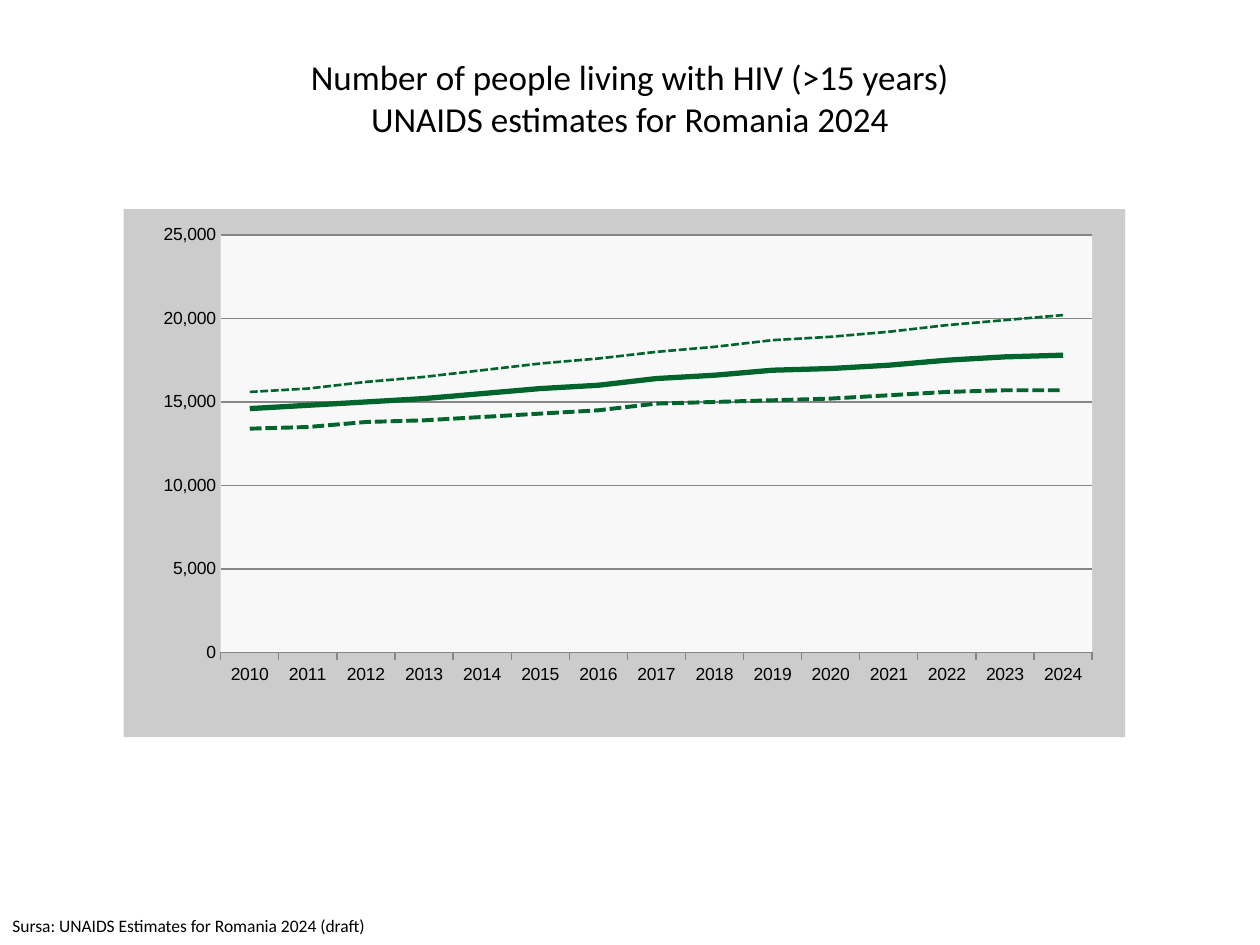
from dataclasses import dataclass
from typing import Optional

from lxml.etree import _Element as Element
from pptx import Presentation
from pptx.chart.chart import Chart
from pptx.chart.data import CategoryChartData as ChartData
from pptx.dml.color import RGBColor
from pptx.enum.chart import XL_CHART_TYPE as ChartType, XL_TICK_MARK as TickMark
from pptx.enum.dml import MSO_LINE_DASH_STYLE as Dash
from pptx.enum.text import MSO_ANCHOR as Anchor, PP_ALIGN as Align
from pptx.oxml import parse_xml
from pptx.oxml.ns import nsdecls, qn
from pptx.slide import Slide
from pptx.util import Pt

COLORS = {
    "text": "000000",
    "estimate": "00642D",
    "chart": "CCCCCC",
    "plot": "F8F8F8",
    "grid": "868686",
}
YEARS = range(2010, 2025)
PLOT_LAYOUT = {"x": 0.097, "y": 0.049, "w": 0.87, "h": 0.791}


@dataclass
class Box:
    left: float
    top: float
    width: float
    height: float

    def points(self) -> tuple:
        return Pt(self.left), Pt(self.top), Pt(self.width), Pt(self.height)


@dataclass
class Caption:
    text: str
    box: Box
    size: float
    align: Align
    anchor: Anchor


@dataclass
class Estimate:
    name: str
    values: list[int]
    width: float
    dash: Optional[Dash] = None


CAPTIONS = [
    Caption("Number of people living with HIV (>15 years)\vUNAIDS estimates for Romania 2024",
            Box(36, 21.6, 648, 68.4), 20, Align.CENTER, Anchor.MIDDLE),
    Caption("Sursa: UNAIDS Estimates for Romania 2024 (draft)",
            Box(0, 519.1, 275, 19.4), 10, Align.LEFT, Anchor.TOP),
]
ESTIMATES = [
    Estimate("Series 1", [14600, 14800, 15000, 15200, 15500, 15800, 16000, 16400,
                          16600, 16900, 17000, 17200, 17500, 17700, 17800], 3),
    Estimate("Series 2", [13400, 13500, 13800, 13900, 14100, 14300, 14500, 14900,
                          15000, 15100, 15200, 15400, 15600, 15700, 15700], 2.25, Dash.SQUARE_DOT),
    Estimate("Series 3", [15600, 15800, 16200, 16500, 16900, 17300, 17600, 18000,
                          18300, 18700, 18900, 19200, 19600, 19900, 20200], 1.5, Dash.SQUARE_DOT),
]


def rgb(name: str) -> RGBColor:
    return RGBColor.from_string(COLORS[name])


def add_caption(slide: Slide, caption: Caption) -> None:
    frame = slide.shapes.add_textbox(*caption.box.points()).text_frame
    frame.word_wrap = True
    frame.vertical_anchor = caption.anchor
    paragraph = frame.paragraphs[0]
    paragraph.text = caption.text
    paragraph.alignment = caption.align
    paragraph.font.name = "Calibri"
    paragraph.font.size = Pt(caption.size)
    paragraph.font.color.rgb = rgb("text")


def area_fill(name: str) -> Element:
    return parse_xml(
        f'<c:spPr {nsdecls("c", "a")}><a:solidFill><a:srgbClr val="{COLORS[name]}"/>'
        "</a:solidFill><a:ln><a:noFill/></a:ln></c:spPr>"
    )


def style_areas(chart: Chart) -> None:
    chart_part = chart._chartSpace.find(qn("c:chart"))
    chart_part.addnext(area_fill("chart"))
    plot_area = chart_part.find(qn("c:plotArea"))
    for layout in plot_area.findall(qn("c:layout")):
        plot_area.remove(layout)
    sides = "".join(f'<c:{side} val="{share}"/>' for side, share in PLOT_LAYOUT.items())
    plot_area.insert(0, parse_xml(
        f'<c:layout {nsdecls("c")}><c:manualLayout><c:layoutTarget val="inner"/>'
        f'<c:xMode val="edge"/><c:yMode val="edge"/>{sides}</c:manualLayout></c:layout>'
    ))
    plot_area.append(area_fill("plot"))


def style_axes(chart: Chart) -> None:
    years, people = chart.category_axis, chart.value_axis
    years.major_tick_mark = TickMark.OUTSIDE
    years.format.line.color.rgb = rgb("grid")
    years.format.line.width = Pt(0.75)
    people.minimum_scale, people.maximum_scale, people.major_unit = 0, 25000, 5000
    people.major_tick_mark = TickMark.NONE
    people.tick_labels.number_format = "#,##0"
    people.tick_labels.number_format_is_linked = False
    people.format.line.fill.background()
    people.has_major_gridlines = True
    gridline = people.major_gridlines.format.line
    gridline.color.rgb = rgb("grid")
    gridline.width = Pt(0.75)


def add_estimates(slide: Slide, box: Box, estimates: list[Estimate]) -> None:
    data = ChartData(number_format="#,##0")
    data.categories = [str(year) for year in YEARS]
    for estimate in estimates:
        data.add_series(estimate.name, estimate.values)
    chart = slide.shapes.add_chart(ChartType.LINE, *box.points(), data).chart
    chart.has_title = False
    chart.has_legend = False
    chart.font.name = "Arial"
    chart.font.size = Pt(10)
    chart.font.color.rgb = rgb("text")
    chart.plots[0].vary_by_categories = False
    for series, estimate in zip(chart.plots[0].series, estimates):
        series.smooth = False
        line = series.format.line
        line.color.rgb = rgb("estimate")
        line.width = Pt(estimate.width)
        if estimate.dash:
            line.dash_style = estimate.dash
    style_axes(chart)
    style_areas(chart)


def main() -> None:
    presentation = Presentation()
    presentation.slide_width, presentation.slide_height = Pt(720), Pt(540)
    slide = presentation.slides.add_slide(presentation.slide_layouts[6])
    for caption in CAPTIONS:
        add_caption(slide, caption)
    add_estimates(slide, Box(70.6, 119.5, 572.4, 301.7), ESTIMATES)
    presentation.save("out.pptx")


if __name__ == "__main__":
    main()
